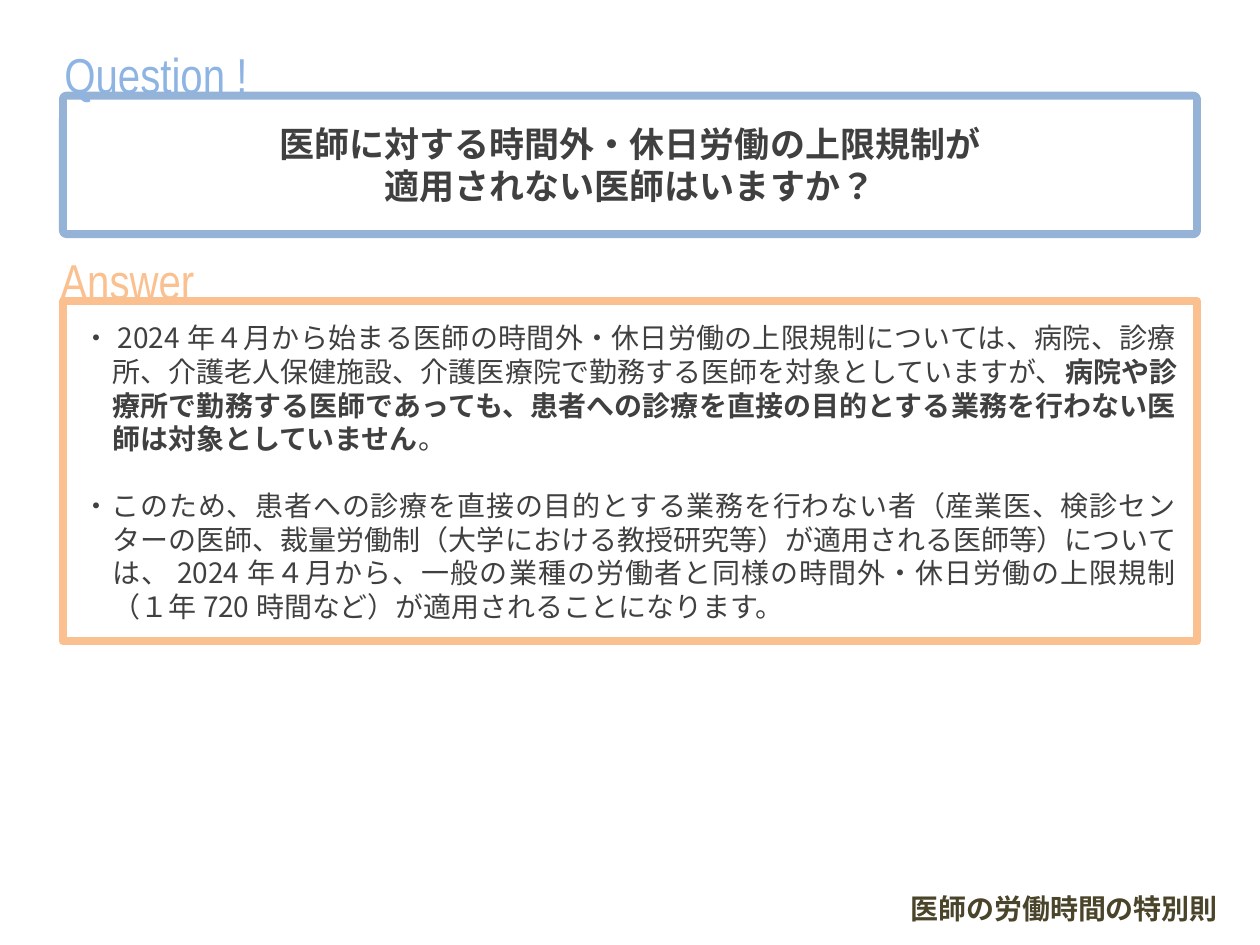
from lxml import etree
from pptx import Presentation
from pptx import util as u
from pptx.dml.color import RGBColor
from pptx.enum import lang, shapes, text
from pptx.oxml.ns import qn

JAPANESE = "Noto Sans CJK JP"
LATIN = "Arial Narrow"
GREY, BLUE, ORANGE = "404040", "95B3D7", "FAC090"
LEFT, WIDTH = 1.27, 22.86

QUESTION = ["医師に対する時間外・休日労働の上限規制が", "適用されない医師はいますか？"]
SCOPE = [
    ("・2024年４月から始まる医師の時間外・休日労働の上限規制については、病院、診療所、"
     "介護老人保健施設、介護医療院で勤務する医師を対象としていますが、", False),
    ("病院や診療所で勤務する医師であっても、患者への診療を直接の目的とする業務を行わない"
     "医師は対象としていません", True),
    ("。", False),
]
CONSEQUENCE = [
    ("・このため、患者への診療を直接の目的とする業務を行わない者（産業医、検診センターの医師、"
     "裁量労働制（大学における教授研究等）が適用される医師等）については、2024年４月から、"
     "一般の業種の労働者と同様の時間外・休日労働の上限規制（１年720時間など）が"
     "適用されることになります。", False),
]


def color(value):
    """Turn a hex string into a colour."""
    return RGBColor.from_string(value)


def style_paragraph(paragraph, font_name, size, font_color, bold=False, hanging=0):
    """Set the font, the language and the hanging indent in centimetres."""
    font = paragraph.font
    font.name, font.size, font.bold = font_name, u.Pt(size), bold
    font.color.rgb = color(font_color)
    properties = paragraph._p.get_or_add_pPr()
    defaults = properties.find(qn("a:defRPr"))
    etree.SubElement(defaults, qn("a:ea")).set("typeface", font_name)
    if font_name == JAPANESE:
        for run in paragraph.runs:
            run.font.language_id = lang.MSO_LANGUAGE_ID.JAPANESE
    if hanging:
        properties.set("marL", str(u.Cm(hanging)))
        properties.set("indent", str(-u.Cm(hanging)))


def add_rounded(slide, left, top, width, height, radius):
    """Add an unfilled, unlined rounded rectangle."""
    shape = slide.shapes.add_shape(shapes.MSO_SHAPE.ROUNDED_RECTANGLE,
                                   u.Cm(left), u.Cm(top), u.Cm(width), u.Cm(height))
    shape.adjustments[0] = radius
    shape.shadow.inherit = False
    shape.fill.background()
    shape.line.fill.background()
    shape.text_frame.word_wrap = True
    return shape


def add_panel(slide, top, height, line_color, radius=0):
    """Add an outlined panel across the slide and return its text frame."""
    panel = add_rounded(slide, LEFT, top, WIDTH, height, radius)
    panel.line.color.rgb = color(line_color)
    panel.line.width = u.Pt(4.5)
    return panel.text_frame


def add_heading(slide, left, top, width, height, wording, font_color, radius=0):
    """Add a heading that sits on the top edge of a panel."""
    frame = add_rounded(slide, left, top, width, height, radius).text_frame
    frame.vertical_anchor = text.MSO_ANCHOR.TOP
    frame.text = wording
    paragraph = frame.paragraphs[0]
    paragraph.alignment = text.PP_ALIGN.LEFT
    paragraph.space_after = u.Pt(6)
    style_paragraph(paragraph, LATIN, 28, font_color)


def add_footer(slide, wording):
    """Add the topic name in the bottom right corner."""
    footer = slide.shapes.add_textbox(u.Cm(18.11), u.Cm(17.93), u.Cm(7.19), u.Cm(0.61))
    footer.text_frame.word_wrap = True
    footer.text_frame.text = wording
    paragraph = footer.text_frame.paragraphs[0]
    paragraph.line_spacing = 0.9
    style_paragraph(paragraph, JAPANESE, 16, "4A452A", bold=True)


def fill_question(frame):
    """Write the centred question lines."""
    frame.vertical_anchor = text.MSO_ANCHOR.MIDDLE
    frame.text = "\n".join(QUESTION)
    for paragraph in frame.paragraphs:
        paragraph.alignment = text.PP_ALIGN.CENTER
        style_paragraph(paragraph, JAPANESE, 20, GREY, bold=True, hanging=0.43)


def fill_answer(frame):
    """Write the justified answer paragraphs with their emphasis."""
    frame.vertical_anchor = text.MSO_ANCHOR.TOP
    frame.margin_left = frame.margin_right = u.Cm(0.4)
    frame.margin_top = frame.margin_bottom = u.Cm(0.4)
    for index, parts in enumerate((SCOPE, CONSEQUENCE)):
        paragraph = frame.add_paragraph() if index else frame.paragraphs[0]
        paragraph.alignment = text.PP_ALIGN.JUSTIFY
        if index:
            paragraph.space_before = u.Pt(19.2)
        for wording, bold in parts:
            run = paragraph.add_run()
            run.text = wording
            if bold:
                run.font.bold = True
        style_paragraph(paragraph, JAPANESE, 16, GREY, hanging=0.6)


def main():
    """Build the question and answer slide."""
    presentation = Presentation()
    presentation.slide_width, presentation.slide_height = u.Cm(25.4), u.Cm(19.05)
    slide = presentation.slides.add_slide(presentation.slide_layouts[6])
    fill_question(add_panel(slide, 1.93, 2.79, BLUE, radius=0.025))
    add_heading(slide, 0.97, 0.69, 11.58, 1.6, "Question !", "8EB4E3", radius=0.17)
    fill_answer(add_panel(slide, 6.07, 6.86, ORANGE))
    add_heading(slide, 0.97, 4.93, 13.94, 1.45, "Answer", ORANGE)
    add_footer(slide, "医師の労働時間の特別則")
    presentation.save("out.pptx")


if __name__ == "__main__":
    main()
